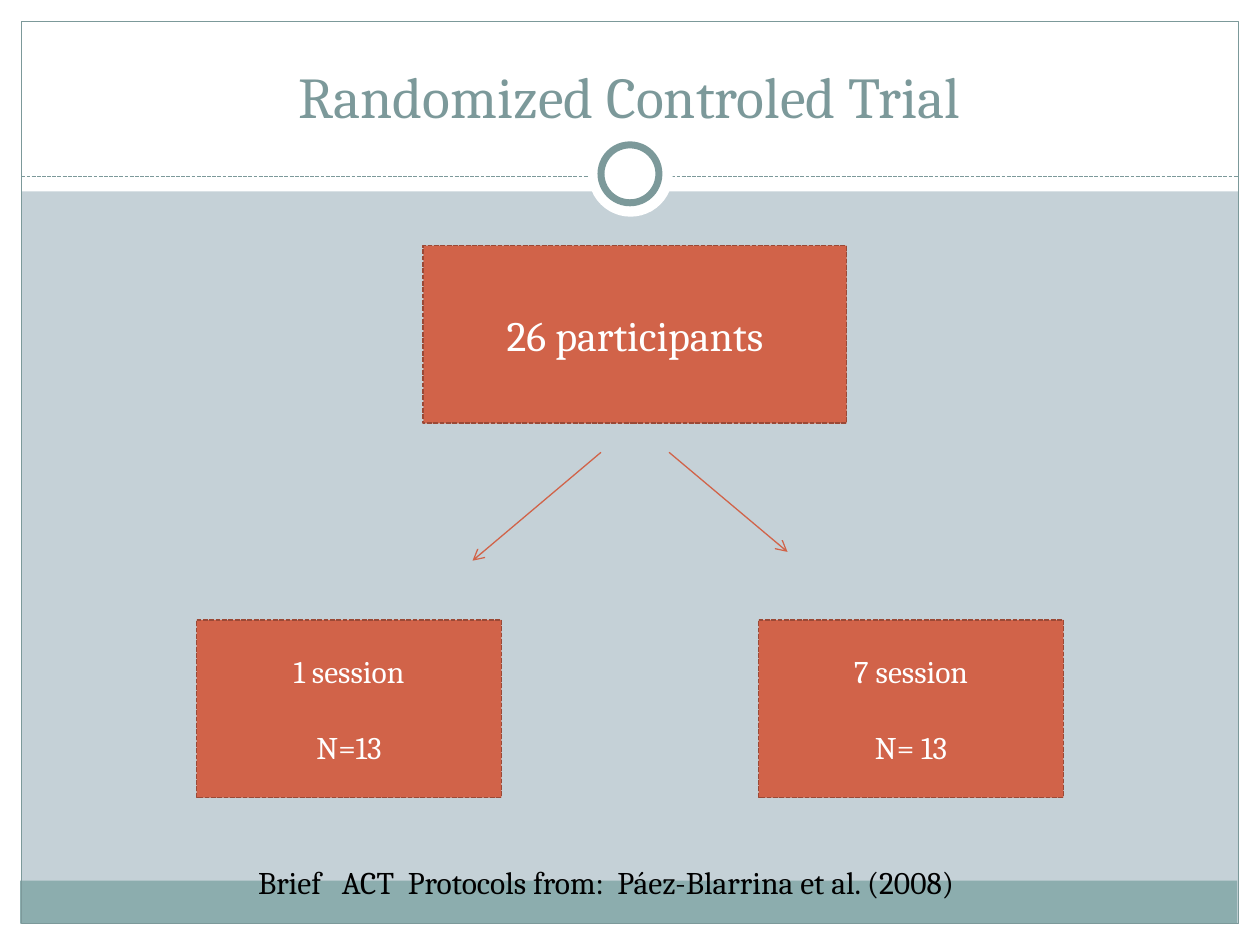
"""Build the Randomized Controled Trial slide with its participant flow."""
from lxml import etree
from pptx import Presentation
from pptx.dml.color import RGBColor
from pptx.enum.dml import MSO_LINE
from pptx.enum.shapes import MSO_CONNECTOR, MSO_SHAPE
from pptx.enum.text import MSO_ANCHOR, MSO_AUTO_SIZE, PP_ALIGN
from pptx.oxml.ns import qn
from pptx.util import Inches, Pt

RECT, OVAL = MSO_SHAPE.RECTANGLE, MSO_SHAPE.OVAL
STRAIGHT = MSO_CONNECTOR.STRAIGHT
DASH = MSO_LINE.SQUARE_DOT
CENTER = PP_ALIGN.CENTER
MIDDLE, BOTTOM = MSO_ANCHOR.MIDDLE, MSO_ANCHOR.BOTTOM
NO_FIT, GROW = MSO_AUTO_SIZE.NONE, MSO_AUTO_SIZE.SHAPE_TO_FIT_TEXT
WHITE, TEAL, RUST = "FFFFFF", "7C999A", "D16349"
rgb = RGBColor.from_string

prs = Presentation()
prs.slide_width, prs.slide_height = Inches(10), Inches(7.5)
slide = prs.slides.add_slide(prs.slide_layouts[5])
slide.background.fill.solid()
slide.background.fill.fore_color.rgb = rgb("C5D1D7")


def add_panel(kind, box, fill=None, line=None, width=0.75):
    panel = slide.shapes.add_shape(kind, *map(Inches, box))
    panel.shadow.inherit = False
    if fill:
        panel.fill.solid()
        panel.fill.fore_color.rgb = rgb(fill)
    else:
        panel.fill.background()
    if line:
        panel.line.color.rgb = rgb(line)
        panel.line.width = Pt(width)
    else:
        panel.line.fill.background()
    return panel


def write(paragraph, text, size, color, align=None):
    paragraph.alignment = align
    run = paragraph.add_run()
    run.text = text
    run.font.name = "Cambria"
    run.font.size = Pt(size)
    run.font.color.rgb = rgb(color)


for margin in [(0, 7.33, 10, 0.17), (0, 0, 10, 1.52),
               (0, 0, 0.17, 7.5), (9.83, 0, 0.17, 7.5)]:
    add_panel(RECT, margin, WHITE)
add_panel(RECT, (0.16, 6.99, 9.66, 0.34), "8CADAE")
add_panel(RECT, (0.17, 0.17, 9.66, 7.16), line=TEAL)

for start, end, color, is_arrow in [
    ((0.17, 1.4), (9.83, 1.4), TEAL, False),
    ((4.77, 3.59), (3.75, 4.45), RUST, True),
    ((5.31, 3.59), (6.25, 4.38), RUST, True),
]:
    connector = slide.shapes.add_connector(STRAIGHT, *map(Inches, start + end))
    connector.line.color.rgb = rgb(color)
    connector.line.width = Pt(0.75)
    if is_arrow:
        etree.SubElement(connector.line._get_or_add_ln(), qn("a:tailEnd"), type="arrow")
    else:
        connector.line.dash_style = DASH
    etree.SubElement(connector._element.spPr, qn("a:effectLst"))

add_panel(OVAL, (4.67, 1.05, 0.67, 0.67), WHITE)
add_panel(OVAL, (4.77, 1.15, 0.46, 0.46), WHITE, TEAL, 4)

title = slide.shapes.title
title.left, title.top, title.width, title.height = map(Inches, (0.33, 0.25, 9.33, 0.83))
title.text_frame.auto_size = NO_FIT
title.text_frame.vertical_anchor = BOTTOM
write(title.text_frame.paragraphs[0], "Randomized Controled Trial", 33, TEAL, CENTER)
title._element.getparent().append(title._element)

for left, top, width, size, lines in [
    (3.36, 1.95, 3.36, 24, ["26 participants"]),
    (1.56, 4.92, 2.42, 18, ["1 session", "N=13"]),
    (6.02, 4.92, 2.42, 18, ["7 session", "N= 13"]),
]:
    group = add_panel(RECT, (left, top, width, 1.41), RUST, "9B4936", 0.9)
    group.line.dash_style = DASH
    frame = group.text_frame
    frame.vertical_anchor = MIDDLE
    for index, text in enumerate(lines):
        paragraph = frame.add_paragraph() if index else frame.paragraphs[0]
        paragraph.space_before = Pt(21.5 if index else 0)
        write(paragraph, text, size, WHITE, CENTER)

citation = slide.shapes.add_textbox(*map(Inches, (1.95, 6.8, 6.33, 0.4)))
citation.text_frame.word_wrap = False
citation.text_frame.auto_size = GROW
write(citation.text_frame.paragraphs[0],
      "Brief   ACT  Protocols from:  Páez-Blarrina et al. (2008)", 18, "000000")

prs.save("out.pptx")
